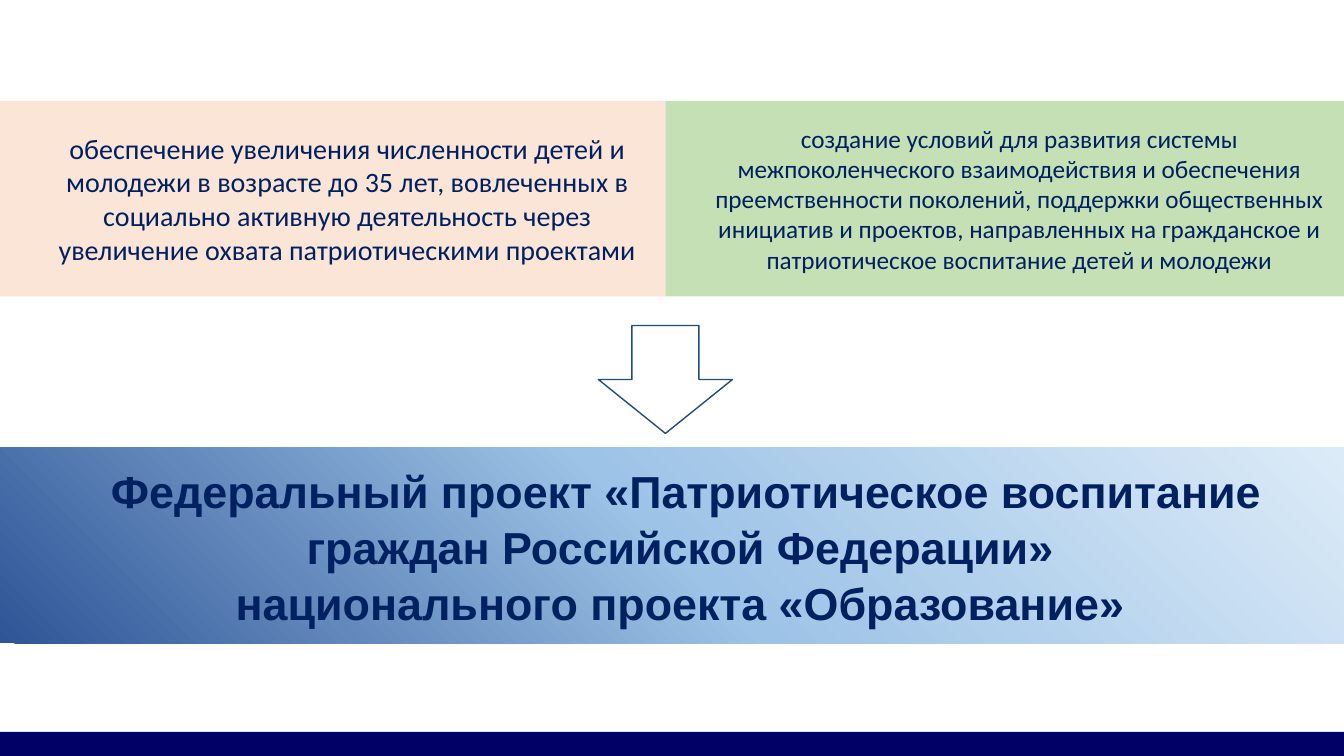
"""Build a slide with two goals leading to a federal project."""
import copy
import pptx
import pptx.util
import pptx.dml.color
import pptx.enum.shapes
import pptx.enum.text

KIND = pptx.enum.shapes.MSO_SHAPE
NAVY = "002060"
WIDE, HIGH = 13.33, 7.5
MID, ROW = 6.6, 1.94

deck = pptx.Presentation()
deck.slide_width = pptx.util.Inches(WIDE)
deck.slide_height = pptx.util.Inches(HIGH)
slide = deck.slides.add_slide(deck.slide_layouts[6])


def tint(part, code):
    part.solid() if hasattr(part, "solid") else None
    target = part.fore_color if hasattr(part, "fore_color") else part.color
    target.rgb = pptx.dml.color.RGBColor.from_string(code)


def block(kind, left, top, width, height, fill):
    shape = slide.shapes.add_shape(kind, *map(pptx.util.Inches, (left, top, width, height)))
    shape.shadow.inherit = False
    tint(shape.fill, fill)
    shape.line.fill.background()
    return shape


foot = block(KIND.RECTANGLE, 0, HIGH - 0.24, WIDE, 0.24, "000066")
left = block(KIND.RECTANGLE, 0, 1, MID, ROW, "FBE5D6")
right = block(KIND.RECTANGLE, MID, 1, WIDE - MID, ROW, "C5E0B4")

arrow = block(KIND.DOWN_ARROW, MID - 1.33 / 2, 3.23, 1.33, 1.07, "FFFFFF")
tint(arrow.line, "1F4E79")
arrow.line.width = pptx.util.Pt(1)

band = block(KIND.RECTANGLE, 0, 4.44, WIDE, ROW, "9DC3E6")
band.fill.gradient()
band.fill.gradient_angle = 45
first = band.fill.gradient_stops[0]._gs
first.addnext(copy.deepcopy(first))
stops = [(0, "2F5597"), (0.5, "9DC3E6"), (1, "DCEBF8")]
for stop, (place, code) in zip(band.fill.gradient_stops, stops):
    stop.position = place
    tint(stop, code)

texts = [
    (left, "Calibri", 20, False, 1,
     "обеспечение увеличения численности детей и молодежи в возрасте до 35 лет, "
     "вовлеченных в социально активную деятельность через увеличение охвата "
     "патриотическими проектами"),
    (right, "Calibri", 18, False, 1,
     "создание условий для развития системы межпоколенческого взаимодействия и "
     "обеспечения преемственности поколений, поддержки общественных инициатив и "
     "проектов, направленных на гражданское и патриотическое воспитание детей и молодежи"),
    (band, "Arial", 32, True, 1.05,
     "Федеральный проект «Патриотическое воспитание граждан Российской Федерации» \n"
     "национального проекта «Образование» "),
]
for shape, face, size, bold, gap, words in texts:
    frame = shape.text_frame
    frame.text = words
    frame.word_wrap = True
    frame.vertical_anchor = pptx.enum.text.MSO_ANCHOR.MIDDLE
    for para in frame.paragraphs:
        para.alignment = pptx.enum.text.PP_ALIGN.CENTER
        para.line_spacing = gap
        para._p.get_or_add_pPr().set("marL", str(pptx.util.Inches(0.29)))
        for run in para.runs:
            run.font.name = face
            run.font.size = pptx.util.Pt(size)
            run.font.bold = bold
            tint(run.font.fill, NAVY)

deck.save("out.pptx")
